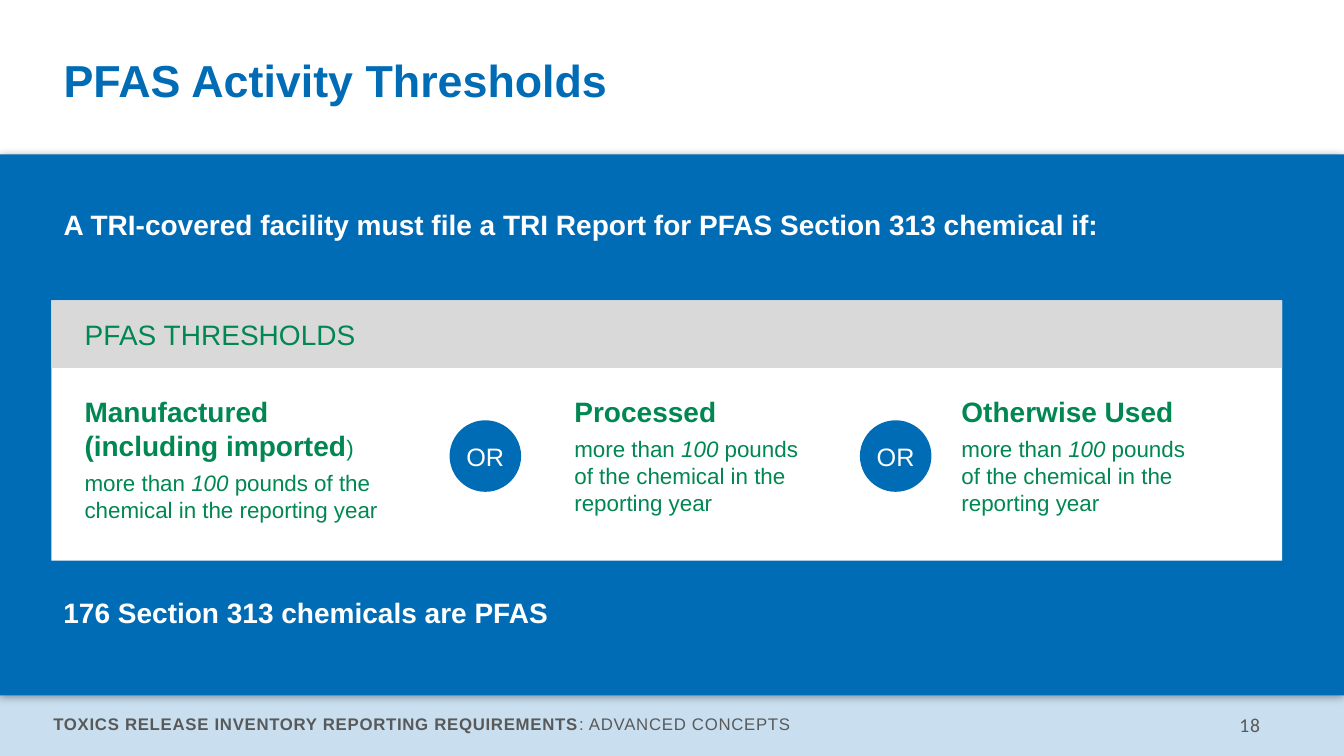
from lxml import etree
from pptx import Presentation
from pptx.dml.color import RGBColor
from pptx.enum.shapes import MSO_SHAPE
from pptx.enum.text import MSO_ANCHOR, MSO_AUTO_SIZE, PP_ALIGN
from pptx.oxml.ns import qn
from pptx.util import Pt

RECTANGLE, OVAL = MSO_SHAPE.RECTANGLE, MSO_SHAPE.OVAL
TOP, MIDDLE = MSO_ANCHOR.TOP, MSO_ANCHOR.MIDDLE
LEFT, CENTER, RIGHT = PP_ALIGN.LEFT, PP_ALIGN.CENTER, PP_ALIGN.RIGHT
NO_AUTOFIT = MSO_AUTO_SIZE.NONE

# Content: a paragraph is a list of runs, a run is (text, format)
TITLE = "PFAS Activity Thresholds"
INTRO = "A TRI-covered facility must file a TRI Report for PFAS Section 313 chemical if:"
CARD_HEADING = "PFAS THRESHOLDS"
HEADING = {"size": 20, "bold": True}
LIMIT = [("more than ", {}), ("100", {"italic": True}),
         (" pounds of the chemical in the reporting year", {})]
ACTIVITIES = [  # left, width, heading runs
    (53.3, 240, [("Manufactured (including imported", HEADING), (")", {})]),
    (403.2, 190, [("Processed", HEADING)]),
    (679.7, 190, [("Otherwise Used", HEADING)]),
]
OR_LEFTS = [321.1, 614.2]
TOTAL = "176 Section 313 chemicals are PFAS"
FOOTER = [("TOXICS RELEASE INVENTORY REPORTING REQUIREMENTS", {"bold": True}),
          (": ADVANCED CONCEPTS", {})]
PAGE_NUMBER = "18"

COLORS = {"blue": "006CB6", "green": "008752", "white": "FFFFFF",
          "band": "D9D9D9", "footer": "595959", "shadow": "000000"}

# Layout in points
SLIDE_W, SLIDE_H = 960, 540
MARGIN, TEXT_W = 38.2, 869
PANEL_TOP, PANEL_H = 110.2, 386.6
FOOTER_TOP = 483.8
CARD_LEFT, CARD_TOP, CARD_W, CARD_H = 36.7, 214.6, 879.1, 185.8
HEADING_H, HEADING_INSET = 48.2, 23.8
ACTIVITY_TOP, ACTIVITY_H = 278.6, 95.8
OR_TOP, OR_SIZE = 300.2, 51.1


def write(shape, paragraphs, size=20, color="white", bold=False, font="Arial",
          align=LEFT, anchor=TOP, gap=0, line=1.0, tracking=0, wrap=True):
    """Fill a shape with one string or with a list of paragraphs of runs."""
    if isinstance(paragraphs, str):
        paragraphs = [[(paragraphs, {})]]
    frame = shape.text_frame
    frame.word_wrap = wrap
    frame.auto_size = NO_AUTOFIT
    frame.vertical_anchor = anchor
    for index, runs in enumerate(paragraphs):
        paragraph = frame.paragraphs[0] if index == 0 else frame.add_paragraph()
        properties = paragraph._p.get_or_add_pPr()
        properties.set("marL", "0")
        properties.set("indent", "0")
        etree.SubElement(properties, qn("a:buNone"))
        paragraph.alignment = align
        paragraph.line_spacing = line
        paragraph.space_before = Pt(gap if index else 0)
        for text, style in runs:
            run = paragraph.add_run()
            run.text = text
            run.font.name = font
            run.font.size = Pt(style.get("size", size))
            run.font.bold = style.get("bold", bold)
            run.font.italic = style.get("italic", False)
            run.font.color.rgb = RGBColor.from_string(COLORS[color])
            if tracking:
                run._r.get_or_add_rPr().set("spc", str(round(tracking * 100)))


def place(shape, left, top, width, height):
    shape.left, shape.top = Pt(left), Pt(top)
    shape.width, shape.height = Pt(width), Pt(height)


def add_block(kind, left, top, width, height, color):
    block = slide.shapes.add_shape(kind, Pt(left), Pt(top), Pt(width), Pt(height))
    block.shadow.inherit = False
    block.fill.solid()
    block.fill.fore_color.rgb = RGBColor.from_string(COLORS[color])
    block.line.fill.background()
    return block


def add_label(left, top, width, height, paragraphs, **style):
    label = slide.shapes.add_textbox(Pt(left), Pt(top), Pt(width), Pt(height))
    write(label, paragraphs, **style)


def set_alpha(color_element, percent):
    etree.SubElement(color_element, qn("a:alpha"), val=str(percent * 1000))


presentation = Presentation()
presentation.slide_width, presentation.slide_height = Pt(SLIDE_W), Pt(SLIDE_H)
slide = presentation.slides.add_slide(presentation.slide_layouts[1])
title, intro = slide.shapes.title, slide.placeholders[1]

# Background: pale footer strip, then the blue panel with a soft shadow
strip = add_block(RECTANGLE, 0, FOOTER_TOP, SLIDE_W, SLIDE_H - FOOTER_TOP, "blue")
set_alpha(strip.element.spPr.find(".//" + qn("a:srgbClr")), 21)
panel = add_block(RECTANGLE, 0, PANEL_TOP, SLIDE_W, PANEL_H, "blue")
shadow = etree.SubElement(panel.element.spPr.find(qn("a:effectLst")), qn("a:outerShdw"),
                          blurRad=str(Pt(6)), dist=str(Pt(1.5)), dir="5400000",
                          rotWithShape="0")
set_alpha(etree.SubElement(shadow, qn("a:srgbClr"), val=COLORS["shadow"]), 34)
for backdrop in (strip, panel):
    title.element.addprevious(backdrop.element)

# Title and introduction
place(title, MARGIN, 30.2, TEXT_W, 58.3)
write(title, TITLE, size=32, color="blue", bold=True, anchor=MIDDLE, line=0.9)
place(intro, MARGIN, 144.7, TEXT_W, 67.7)
write(intro, INTRO, bold=True)

# Thresholds card
add_block(RECTANGLE, CARD_LEFT, CARD_TOP, CARD_W, CARD_H, "white")
heading = add_block(RECTANGLE, CARD_LEFT, CARD_TOP, CARD_W, HEADING_H, "band")
heading.text_frame.margin_left = Pt(HEADING_INSET)
write(heading, CARD_HEADING, color="green", anchor=MIDDLE)
for left, width, activity in ACTIVITIES:
    add_label(left, ACTIVITY_TOP, width, ACTIVITY_H, [activity, LIMIT],
              size=16, color="green", gap=5)
for left in OR_LEFTS:
    circle = add_block(OVAL, left, OR_TOP, OR_SIZE, OR_SIZE, "blue")
    write(circle, "OR", size=18, align=CENTER, anchor=MIDDLE, wrap=False)

# Closing line and footer
add_label(MARGIN, 421.9, 718.6, 31.7, TOTAL, bold=True)
add_label(31, 506.2, 606.2, 21.6, [FOOTER], size=12, color="footer", tracking=0.5)
add_label(811.4, 505.4, 95.8, 24.5, PAGE_NUMBER, size=14, color="footer",
          font="Calibri", align=RIGHT, tracking=0.5)

presentation.save("out.pptx")
